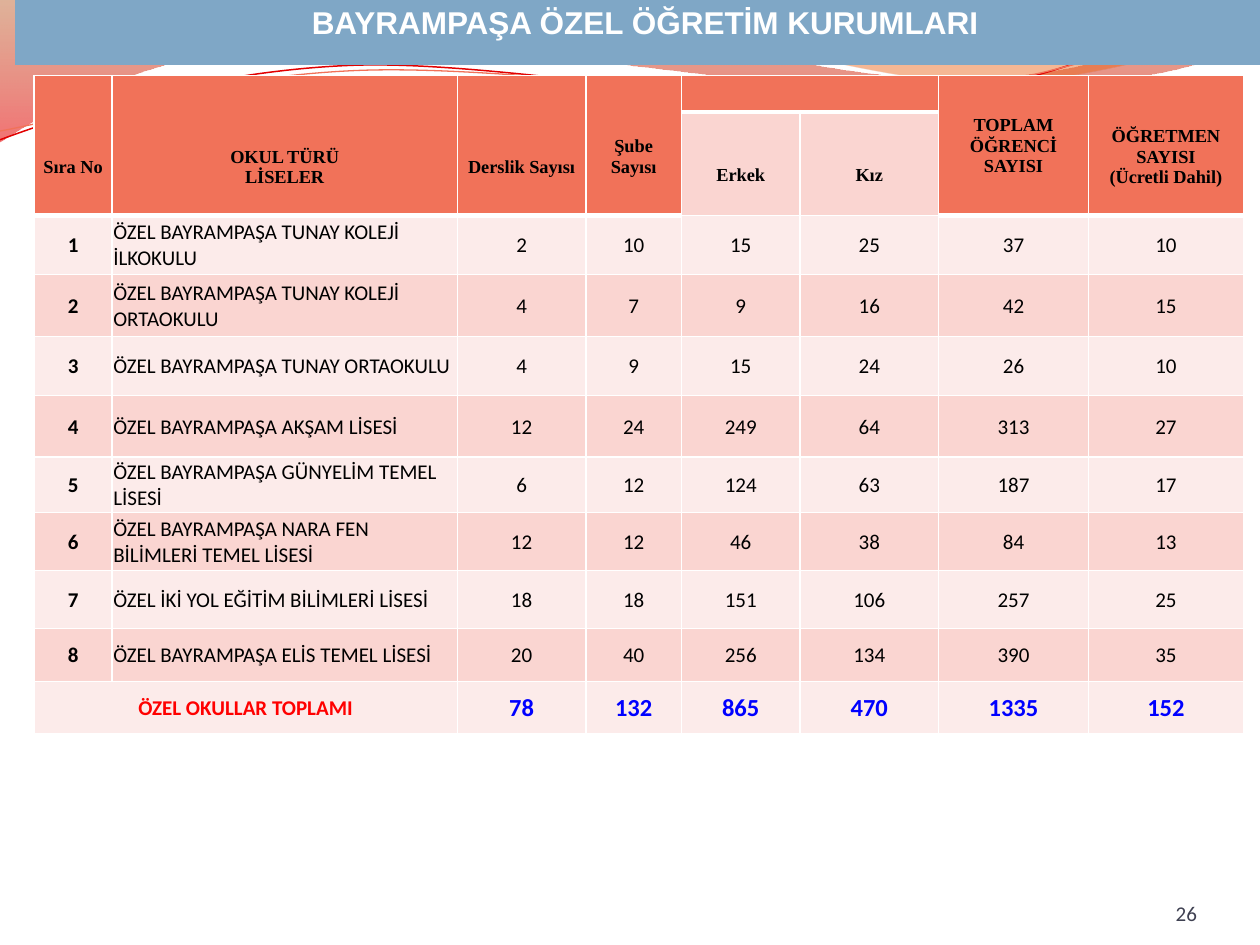
from lxml import etree
from pptx import Presentation
from pptx import util as u
from pptx.dml.color import RGBColor
from pptx.enum import text
from pptx.oxml.ns import qn

COLORS = {
    "white": "FFFFFF", "black": "000000", "head": "F17259",
    "light": "FCEBEA", "dark": "FAD5D1", "red": "FF0000",
    "blue": "0000FF", "page": "3F4152", "band": "7FA7C6",
    "brown": "B9561F", "flame": "E70000",
    "wine": "BD0000", "orange": "EC6215", "line": "E10000",
}
COLS = [0.62, 2.74, 1.02, 0.76, 0.94, 1.1, 1.19, 1.23]
ROWS = [0.29, 0.82, 0.47, 0.49, 0.47, 0.49, 0.44, 0.46, 0.46, 0.42, 0.42]
HEADS = [
    ("Sıra No", 2), ("OKUL TÜRÜ\nLİSELER", 2), ("Derslik Sayısı", 2),
    ("Şube\nSayısı", 1), ("", 0), None,
    ("TOPLAM ÖĞRENCİ SAYISI", 0), ("ÖĞRETMEN SAYISI\n(Ücretli Dahil)", 1),
]
SCHOOLS = [
    ("ÖZEL BAYRAMPAŞA TUNAY KOLEJİ İLKOKULU", 2, 10, 15, 25, 37, 10),
    ("ÖZEL BAYRAMPAŞA TUNAY KOLEJİ ORTAOKULU", 4, 7, 9, 16, 42, 15),
    ("ÖZEL BAYRAMPAŞA TUNAY ORTAOKULU", 4, 9, 15, 24, 26, 10),
    ("ÖZEL BAYRAMPAŞA AKŞAM LİSESİ", 12, 24, 249, 64, 313, 27),
    ("ÖZEL BAYRAMPAŞA GÜNYELİM TEMEL LİSESİ", 6, 12, 124, 63, 187, 17),
    ("ÖZEL BAYRAMPAŞA NARA FEN BİLİMLERİ TEMEL LİSESİ",
     12, 12, 46, 38, 84, 13),
    ("ÖZEL İKİ YOL EĞİTİM BİLİMLERİ LİSESİ", 18, 18, 151, 106, 257, 25),
    ("ÖZEL BAYRAMPAŞA ELİS TEMEL LİSESİ", 20, 40, 256, 134, 390, 35),
]
TOTALS = [78, 132, 865, 470, 1335, 152]
WAVES = [
    ([(0, -0.01), (4.4, -0.01),
      (4.76, 0.17, 6.64, 0.63, 7.58, 0.63), (8.53, 0.63, 9.58, 0.26, 10, 0.09),
      (10.01, 0.36), (9.83, 0.44, 8.7, 0.76, 7.46, 0.75),
      (6.22, 0.75, 3.82, 0.28, 2.57, 0.34),
      (1.29, 0.35, 0.46, 0.83, -0.01, 1.13)],
     [(0, "brown", 45), (1, "flame", 55)]),
    ([(4.79, -0.01), (5.09, 0.11, 6.82, 0.62, 7.69, 0.65),
      (8.56, 0.69, 9.61, 0.32, 10, 0.21), (10, 0)],
     [(0, "wine", 30), (0.8, "orange", 45)]),
]
CURVES = [
    ([(0, 1.11), (0.48, 0.93, 1.58, 0.57, 2.77, 0.52),
      (3.95, 0.47, 5.93, 0.89, 7.13, 0.8),
      (8.33, 0.71, 9.38, 0.15, 9.98, -0.02)], "line", 0.85),
    ([(0, 1.04), (0.47, 0.96, 1.64, 0.61, 2.83, 0.56),
      (4.03, 0.51, 5.97, 0.83, 7.17, 0.75),
      (8.36, 0.67, 9.41, 0.21, 10, 0.06)], "head", 0.75),
]


def tint(name):
    return RGBColor.from_string(COLORS[name])


def draw(slide, steps, close):
    ends = [tuple(u.Inches(n) for n in step[-2:]) for step in steps]
    pen = slide.shapes.build_freeform(*ends[0])
    pen.add_line_segments(ends[1:], close=close)
    shape = pen.convert_to_shape()
    shape.shadow.inherit = False
    nodes = list(shape._element.spPr.iter(qn("a:lnTo")))
    for node, step in zip(nodes, steps[1:]):
        if len(step) == 6:
            bend(node, step, shape)
    return shape


def bend(node, step, shape):
    node.tag = qn("a:cubicBezTo")
    for i in (2, 0):
        point = etree.Element(qn("a:pt"),
                              x=str(u.Inches(step[i]) - shape.left),
                              y=str(u.Inches(step[i + 1]) - shape.top))
        node.insert(0, point)


def add_wave(slide, steps, stops):
    shape = draw(slide, steps, True)
    shape.line.fill.background()
    shape.fill.gradient()
    shape.fill.gradient_angle = 270
    for stop, (place, name, _) in zip(shape.fill.gradient_stops, stops):
        stop.position = place
        stop.color.rgb = tint(name)
    for node, stop in zip(shape._element.spPr.iter(qn("a:srgbClr")), stops):
        etree.SubElement(node, qn("a:alpha"), val=str(stop[2] * 1000))


def add_curve(slide, steps, name, width):
    shape = draw(slide, steps, False)
    shape.fill.background()
    shape.line.color.rgb = tint(name)
    shape.line.width = u.Pt(width)


def style(frame, words, size, font, color, bold=False, align="CENTER"):
    frame.text = words
    for para in frame.paragraphs:
        para.alignment = getattr(text.PP_ALIGN, align)
        for run in para.runs:
            run.font.size = u.Pt(size)
            run.font.name = font
            run.font.bold = bold
            run.font.color.rgb = tint(color)
        if not para.runs:
            etree.SubElement(para._p, qn("a:endParaRPr"),
                             sz=str(int(size * 100)))


def edge(cell, fill, base=1, width=1):
    props = cell._tc.get_or_add_tcPr()
    for side in "LRTB":
        size = base if side == "B" else width
        line = etree.SubElement(props, qn("a:ln" + side), w=str(u.Pt(size)))
        if size:
            solid = etree.SubElement(line, qn("a:solidFill"))
            etree.SubElement(solid, qn("a:srgbClr"), val=COLORS["white"])
        else:
            etree.SubElement(line, qn("a:noFill"))
    cell.fill.solid()
    cell.fill.fore_color.rgb = tint(fill)


def add_grid(slide, left, top, cols, rows):
    frame = slide.shapes.add_table(
        len(rows), len(cols), u.Inches(left), u.Inches(top),
        u.Inches(sum(cols)), u.Inches(sum(rows)))
    grid = frame.table
    grid.first_row = grid.horz_banding = False
    for col, width in zip(grid.columns, cols):
        col.width = u.Inches(width)
    for row, height in zip(grid.rows, rows):
        row.height = u.Inches(height)
    return grid


def shade(row, col):
    if row == 0 or row == 1 and col not in (4, 5):
        return "head"
    return "dark" if row % 2 else "light"


def fill_head(grid):
    items = [(0, col, head) for col, head in enumerate(HEADS) if head]
    items += [(1, 4, ("Erkek", 1)), (1, 5, ("Kız", 1))]
    for row, col, (words, drop) in items:
        cell = grid.cell(row, col)
        style(cell.text_frame, words, 10.5, "Times New Roman", "black", True)
        cell.margin_top = u.Inches(0.01 + 0.17 * drop)
    for col in (0, 1, 2, 3, 6, 7):
        grid.cell(0, col).merge(grid.cell(1, col))
    grid.cell(0, 4).merge(grid.cell(0, 5))


def fill_body(grid):
    for num, school in enumerate(SCHOOLS, 1):
        for col, value in enumerate((num, *school)):
            style(grid.cell(num + 1, col).text_frame, str(value), 12,
                  "Calibri", "black", col == 0,
                  "LEFT" if col == 1 else "CENTER")
    last = len(ROWS) - 1
    style(grid.cell(last, 0).text_frame, "ÖZEL OKULLAR TOPLAMI", 12,
          "Calibri", "red", True)
    for col, value in enumerate(TOTALS, 2):
        style(grid.cell(last, col).text_frame, str(value), 14,
              "Calibri", "blue", True)
    grid.cell(last, 0).merge(grid.cell(last, 1))


def add_schools(slide):
    grid = add_grid(slide, 0.27, 0.6, COLS, ROWS)
    for row in range(len(ROWS)):
        for col in range(len(COLS)):
            cell = grid.cell(row, col)
            fill = shade(row, col)
            edge(cell, fill, 3 if fill == "head" else 1)
            cell.vertical_anchor = text.MSO_ANCHOR.MIDDLE
            cell.margin_left = cell.margin_right = u.Inches(0.01)
            cell.margin_top, cell.margin_bottom = u.Inches(0.01), 0
    fill_head(grid)
    fill_body(grid)


def add_title(slide):
    cell = add_grid(slide, 0.12, 0, [10], [0.52]).cell(0, 0)
    edge(cell, "band", 0, 0)
    style(cell.text_frame, "BAYRAMPAŞA ÖZEL ÖĞRETİM KURUMLARI", 18,
          "Arial", "white", True)


def add_page(slide):
    box = slide.shapes.add_textbox(u.Inches(8.67), u.Inches(6.95),
                                   u.Inches(0.83), u.Inches(0.4))
    frame = box.text_frame
    frame.word_wrap = True
    frame.vertical_anchor = text.MSO_ANCHOR.BOTTOM
    frame.margin_left = frame.margin_right = 0
    frame.margin_top = frame.margin_bottom = 0
    style(frame, "26", 12, "Calibri", "page", align="RIGHT")


def main():
    deck = Presentation()
    deck.slide_width, deck.slide_height = u.Inches(10), u.Inches(7.5)
    slide = deck.slides.add_slide(deck.slide_layouts[6])
    for wave in WAVES:
        add_wave(slide, *wave)
    for curve in CURVES:
        add_curve(slide, *curve)
    add_page(slide)
    add_schools(slide)
    add_title(slide)
    deck.save("out.pptx")


if __name__ == "__main__":
    main()
